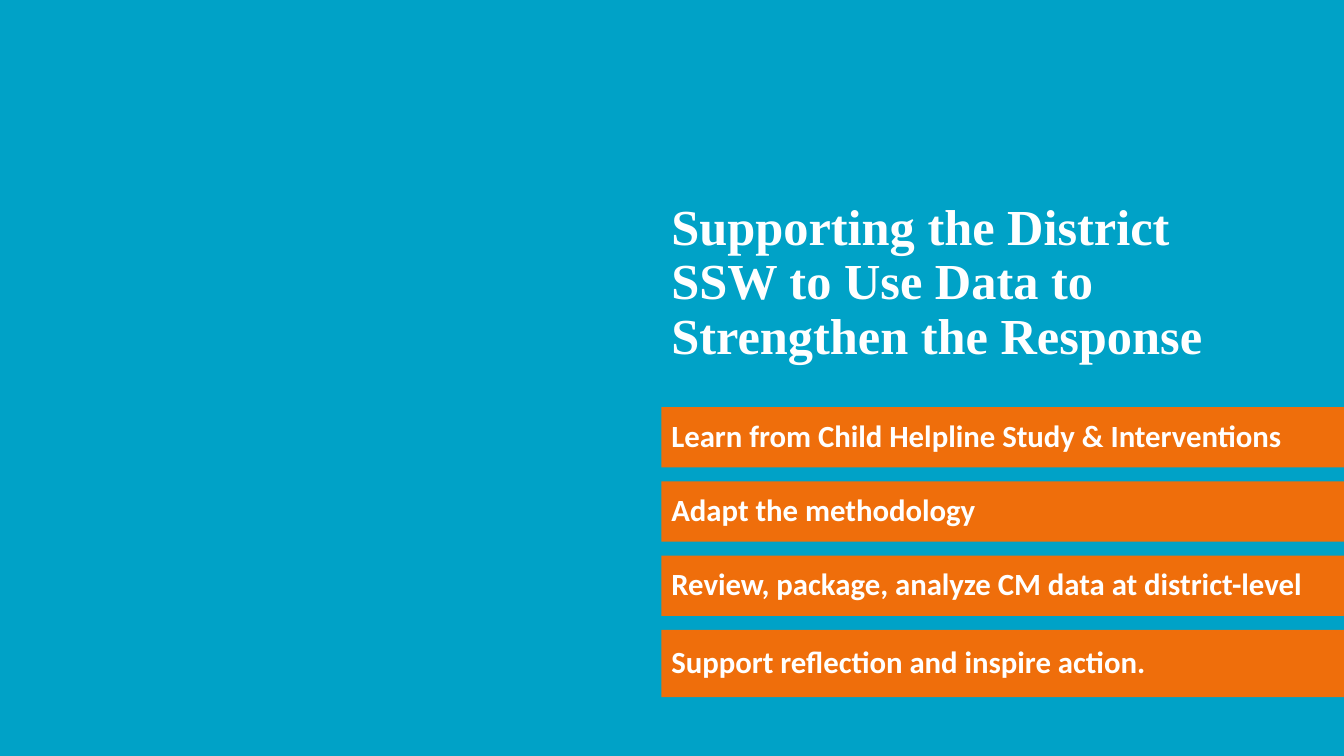
from pptx import Presentation
from pptx.dml.color import RGBColor
from pptx.enum.shapes import MSO_SHAPE
from pptx.enum.text import MSO_ANCHOR, PP_ALIGN
from pptx.util import Cm, Pt


def color(value):
    return RGBColor.from_string(value)


class SlideBuilder:
    """Holds the style and the current slide, and adds its elements."""

    background = "00A2C7"
    bar_fill = "EF6E0B"
    text_color = "FFFFFF"
    title_font = "Times New Roman"
    bar_font = "Calibri"

    def __init__(self, deck):
        self.page = deck.slides.add_slide(deck.slide_layouts[6])
        fill = self.page.background.fill
        fill.solid()
        fill.fore_color.rgb = color(self.background)

    def set_text(self, shape, text, font_name, size, anchor):
        frame = shape.text_frame
        frame.word_wrap = True
        frame.vertical_anchor = anchor
        para = frame.paragraphs[0]
        para.text = text
        para.alignment = PP_ALIGN.LEFT
        para.line_spacing = 0.9
        para.font.name = font_name
        para.font.size = Pt(size)
        para.font.bold = True
        para.font.color.rgb = color(self.text_color)

    def title(self, text, left, top, width, height):
        box = self.page.shapes.add_textbox(Cm(left), Cm(top), Cm(width), Cm(height))
        self.set_text(box, text, self.title_font, 36, MSO_ANCHOR.BOTTOM)

    def bar(self, text, left, top, width, height):
        bar = self.page.shapes.add_shape(
            MSO_SHAPE.RECTANGLE, Cm(left), Cm(top), Cm(width), Cm(height))
        bar.shadow.inherit = False
        bar.fill.solid()
        bar.fill.fore_color.rgb = color(self.bar_fill)
        bar.line.fill.background()
        self.set_text(bar, text, self.bar_font, 22, MSO_ANCHOR.MIDDLE)


def main():
    deck = Presentation()
    deck.slide_width = Cm(33.87)
    deck.slide_height = Cm(19.05)
    builder = SlideBuilder(deck)

    left = 16.67
    builder.title("Supporting the District SSW to Use Data to Strengthen the Response",
                  left, 2.8, 14.28, 6.53)

    steps = [
        ("Learn from Child Helpline Study & Interventions", 1.52),
        ("Adapt the methodology", 1.52),
        ("Review, package, analyze CM data at district-level", 1.52),
        ("Support reflection and inspire action.", 1.7),
    ]
    for index, (text, height) in enumerate(steps):
        builder.bar(text, left, 10.26 + index * 1.87, 17.2, height)

    deck.save("out.pptx")


if __name__ == "__main__":
    main()
